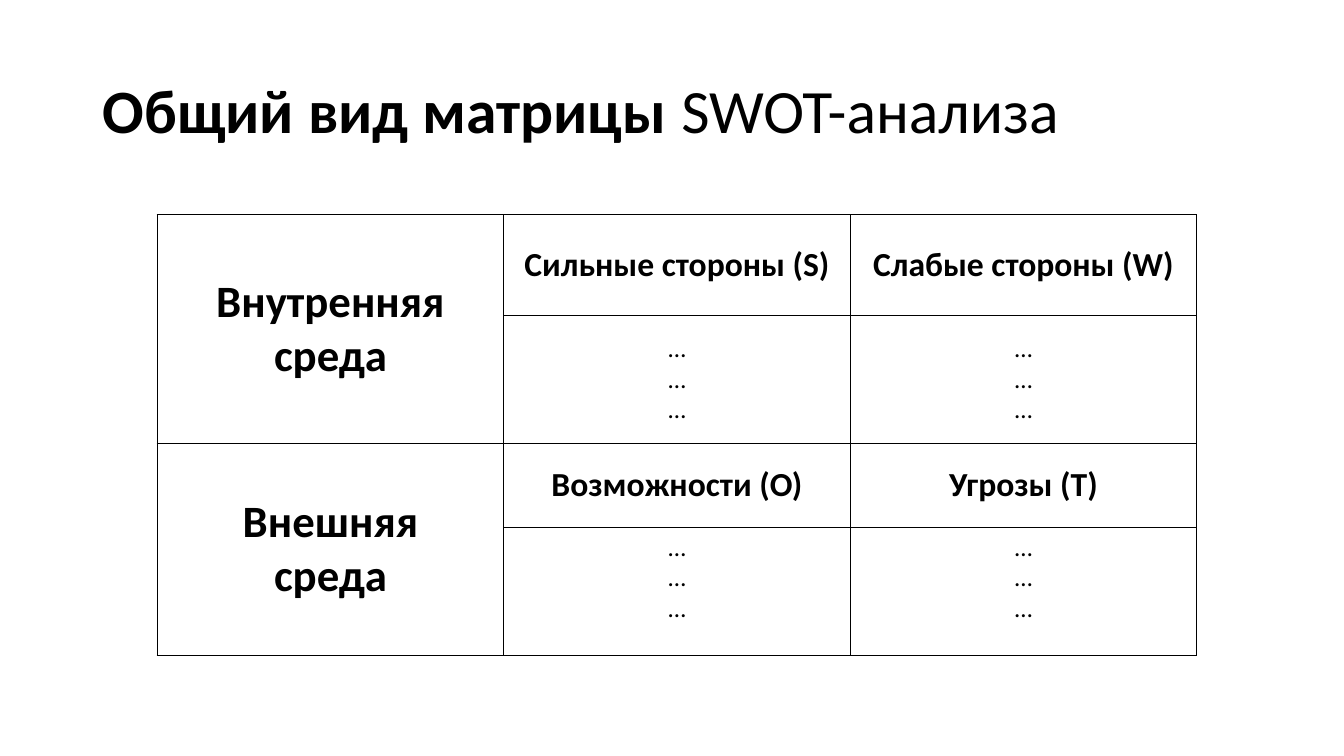
import pptx
import pptx.dml.color
import pptx.enum.text
import pptx.oxml
import pptx.oxml.ns
import pptx.util
from pptx.util import Inches

ANCHOR = pptx.enum.text.MSO_ANCHOR
BLACK = "000000"


def style_run(run, size, bold):
    run.font.name = "Calibri"
    run.font.size = pptx.util.Pt(size)
    run.font.bold = bold
    run.font.color.rgb = pptx.dml.color.RGBColor.from_string(BLACK)


def add_borders(cell):
    """Draw a 1 pt line on all four sides of a table cell."""
    properties = cell._tc.get_or_add_tcPr()
    for position, side in enumerate(("lnL", "lnR", "lnT", "lnB")):
        line = pptx.oxml.parse_xml(
            f'<a:{side} {pptx.oxml.ns.nsdecls("a")} w="12700">'
            f'<a:solidFill><a:srgbClr val="{BLACK}"/></a:solidFill></a:{side}>'
        )
        properties.insert(position, line)


prs = pptx.Presentation()
prs.slide_width = Inches(13.33)
prs.slide_height = Inches(7.5)
slide = prs.slides.add_slide(prs.slide_layouts[6])

# Title
title = slide.shapes.add_textbox(Inches(0.92), Inches(0.4), Inches(11.5), Inches(1.45)).text_frame
title.word_wrap = True
title.vertical_anchor = ANCHOR.MIDDLE
heading = title.paragraphs[0]
heading.line_spacing = 0.9
for words, bold in (("Общий вид матрицы ", True), ("SWOT-анализа", False)):
    run = heading.add_run()
    run.text = words
    style_run(run, 44, bold)

# SWOT matrix
DOTS = "…\n…\n…"
matrix_rows = [
    ("Внутренняя среда", "Сильные стороны (S)", "Слабые стороны (W)"),
    ("", DOTS, DOTS),
    ("Внешняя\nсреда", "Возможности (О)", "Угрозы (T)"),
    ("", DOTS, DOTS),
]
row_heights = [1, 1.27, 0.83, 1.27]

matrix = slide.shapes.add_table(
    4, 3, Inches(1.56), Inches(2.13), Inches(10.31), Inches(sum(row_heights))
).table
matrix.first_row = False
matrix.horz_banding = False

for row, height in zip(matrix.rows, row_heights):
    row.height = Inches(height)

for row_index, texts in enumerate(matrix_rows):
    for column_index, text in enumerate(texts):
        cell = matrix.cell(row_index, column_index)
        cell.fill.background()
        add_borders(cell)
        cell.text_frame.text = text
        cell.vertical_anchor = ANCHOR.TOP if row_index == 3 else ANCHOR.MIDDLE
        size = 32 if column_index == 0 else 18 if text == DOTS else 24
        for paragraph in cell.text_frame.paragraphs:
            paragraph.alignment = pptx.enum.text.PP_ALIGN.CENTER
            for run in paragraph.runs:
                style_run(run, size, text != DOTS)

for top in (0, 2):
    matrix.cell(top, 0).merge(matrix.cell(top + 1, 0))

prs.save("out.pptx")
